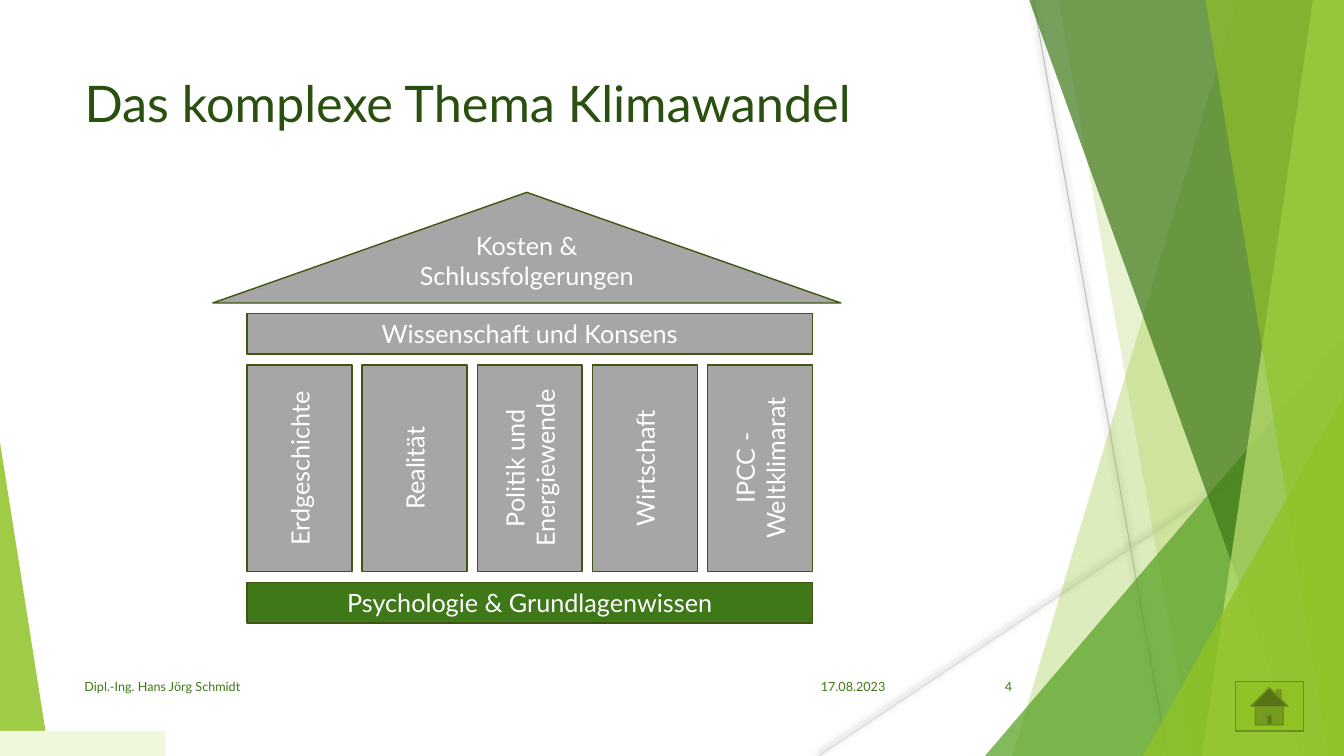
from lxml import etree
from pptx import Presentation
from pptx.dml.color import RGBColor
from pptx.enum.shapes import MSO_CONNECTOR, MSO_SHAPE
from pptx.enum.text import MSO_ANCHOR, PP_ALIGN
from pptx.oxml.ns import qn
from pptx.util import Pt

STRAIGHT = MSO_CONNECTOR.STRAIGHT
RECTANGLE = MSO_SHAPE.RECTANGLE
TRIANGLE = MSO_SHAPE.ISOSCELES_TRIANGLE
HOME_BUTTON = MSO_SHAPE.ACTION_BUTTON_HOME
TOP, MIDDLE = MSO_ANCHOR.TOP, MSO_ANCHOR.MIDDLE
LEFT, CENTER, RIGHT = PP_ALIGN.LEFT, PP_ALIGN.CENTER, PP_ALIGN.RIGHT

FONT = "Lato"
SLIDE_WIDTH, SLIDE_HEIGHT = 960, 540
GREEN, DARK_GREEN, TITLE_GREEN = "90C226", "3F7819", "2A5010"
GREY, OUTLINE, WHITE = "A6A6A6", "3F5511", "FFFFFF"

FACETS = [
    (884, 723, GREEN, 30),
    (756, 852, GREEN, 20),
    (735, 929.5, DARK_GREEN, 70),
    (938, 858.5, "C0E474", 70),
    (861, 949, GREEN, 65),
]
PILLARS = [
    "Erdgeschichte",
    "Realität",
    "Politik und Energiewende",
    "Wirtschaft",
    "IPCC - Weltklimarat",
]
HOUSE_LEFT, HOUSE_WIDTH, PILLAR_WIDTH = 176.4, 404, 75


def color(value):
    return RGBColor.from_string(value)


def set_fill(shape, value, opacity=100):
    shape.shadow.inherit = False
    shape.fill.solid()
    shape.fill.fore_color.rgb = color(value)
    if opacity < 100:
        tint = shape.fill._xPr.find(qn("a:solidFill"))[0]
        etree.SubElement(tint, qn("a:alpha"), val=str(opacity * 1000))


def add_shadow(properties, blur, distance, angle, opacity):
    effects = etree.SubElement(properties, qn("a:effectLst"))
    shadow = etree.SubElement(
        effects, qn("a:outerShdw"), blurRad=str(Pt(blur)), dist=str(Pt(distance)),
        dir=str(angle * 60000), algn="tl", rotWithShape="0")
    tint = etree.SubElement(shadow, qn("a:srgbClr"), val="000000")
    etree.SubElement(tint, qn("a:alpha"), val=str(opacity * 1000))


def add_line(page, start, end, value):
    line = page.shapes.add_connector(STRAIGHT, *map(Pt, start + end))
    line.line.color.rgb = color(value)
    line.line.width = Pt(0.75)
    add_shadow(line._element.spPr, 5, 2, 245, 50)


def add_facet(page, top_left, bottom_left, value, opacity):
    outline = page.shapes.build_freeform(Pt(top_left), Pt(-0.6))
    outline.add_line_segments([
        (Pt(SLIDE_WIDTH), Pt(-0.6)),
        (Pt(SLIDE_WIDTH), Pt(SLIDE_HEIGHT)),
        (Pt(bottom_left), Pt(SLIDE_HEIGHT)),
    ])
    facet = outline.convert_to_shape()
    set_fill(facet, value, opacity)
    facet.line.fill.background()


def add_block(page, kind, place, value, opacity=100, outline=None):
    block = page.shapes.add_shape(kind, *map(Pt, place))
    set_fill(block, value, opacity)
    if outline:
        block.line.color.rgb = color(outline)
        block.line.width = Pt(1)
    else:
        block.line.fill.background()
    return block


def add_corner(page, place, value, opacity, tip):
    corner = add_block(page, TRIANGLE, place, value, opacity)
    corner.adjustments[0] = tip


def set_text(shape, text, size, value, align, anchor):
    frame = shape.text_frame
    frame.word_wrap = True
    frame.vertical_anchor = anchor
    frame.text = text
    para = frame.paragraphs[0]
    para.alignment = align
    span = para.runs[0]
    span.font.name = FONT
    span.font.size = Pt(size)
    span.font.color.rgb = color(value)
    return span


def add_label(page, text, place, size, value, align=LEFT, anchor=MIDDLE):
    box = page.shapes.add_textbox(*map(Pt, place))
    return set_text(box, text, size, value, align, anchor)


def add_house_part(page, text, place, kind=RECTANGLE, value=GREY):
    part = add_block(page, kind, place, value, outline=OUTLINE)
    set_text(part, text, 18, WHITE, CENTER, MIDDLE)
    return part


def add_background(page):
    add_line(page, (738, 0), (834, 540), "BFBFBF")
    add_line(page, (960, 290), (584.6, 540), "D9D9D9")
    for facet in FACETS[:2]:
        add_facet(page, *facet)
    add_corner(page, (703.5, 240, 256.5, 300), "54A021", 72, 1)
    for facet in FACETS[2:]:
        add_facet(page, *facet)
    add_corner(page, (816.5, 283, 143.5, 257), GREEN, 80, 1)
    add_corner(page, (0, 316, 35.3, 224), GREEN, 85, 0)
    add_block(page, RECTANGLE, (0, 522, 118, 18), "EFF8DC")


def add_house(page):
    add_house_part(page, "Psychologie & Grundlagenwissen",
                   (HOUSE_LEFT, 416.2, HOUSE_WIDTH, 28.8), value=DARK_GREEN)
    pitch = (HOUSE_WIDTH - PILLAR_WIDTH) / (len(PILLARS) - 1)
    for index, text in enumerate(PILLARS):
        pillar = add_house_part(
            page, text, (HOUSE_LEFT + index * pitch, 260.6, PILLAR_WIDTH, 147.6))
        pillar.text_frame._txBody.bodyPr.set("vert", "vert270")
    add_house_part(page, "Wissenschaft und Konsens",
                   (HOUSE_LEFT, 224, HOUSE_WIDTH, 28.8))
    roof = add_house_part(page, "Kosten & Schlussfolgerungen",
                          (152, 137.4, 448.6, 79), TRIANGLE)
    roof.text_frame.margin_bottom = Pt(25.2)


def main():
    deck = Presentation()
    deck.slide_width, deck.slide_height = Pt(SLIDE_WIDTH), Pt(SLIDE_HEIGHT)
    page = deck.slides.add_slide(deck.slide_layouts[6])
    add_background(page)
    title = add_label(page, "Das komplexe Thema Klimawandel",
                      (53.3, 48, 677, 104), 36, TITLE_GREEN, anchor=TOP)
    properties = title.font._element
    add_shadow(properties, 4, 3, 45, 45)
    properties.insert(1, properties[-1])
    add_label(page, "17.08.2023", (567.4, 476, 72, 28.8), 9, DARK_GREEN, RIGHT)
    add_label(page, "Dipl.-Ing. Hans Jörg Schmidt", (53.3, 476, 496, 28.8), 9, DARK_GREEN)
    add_label(page, "4", (676, 476, 54, 28.8), 9, DARK_GREEN, RIGHT)
    add_house(page)
    add_block(page, HOME_BUTTON, (882.5, 486.8, 48.4, 35.4), GREEN, outline="6B901C")
    deck.save("out.pptx")


if __name__ == "__main__":
    main()
